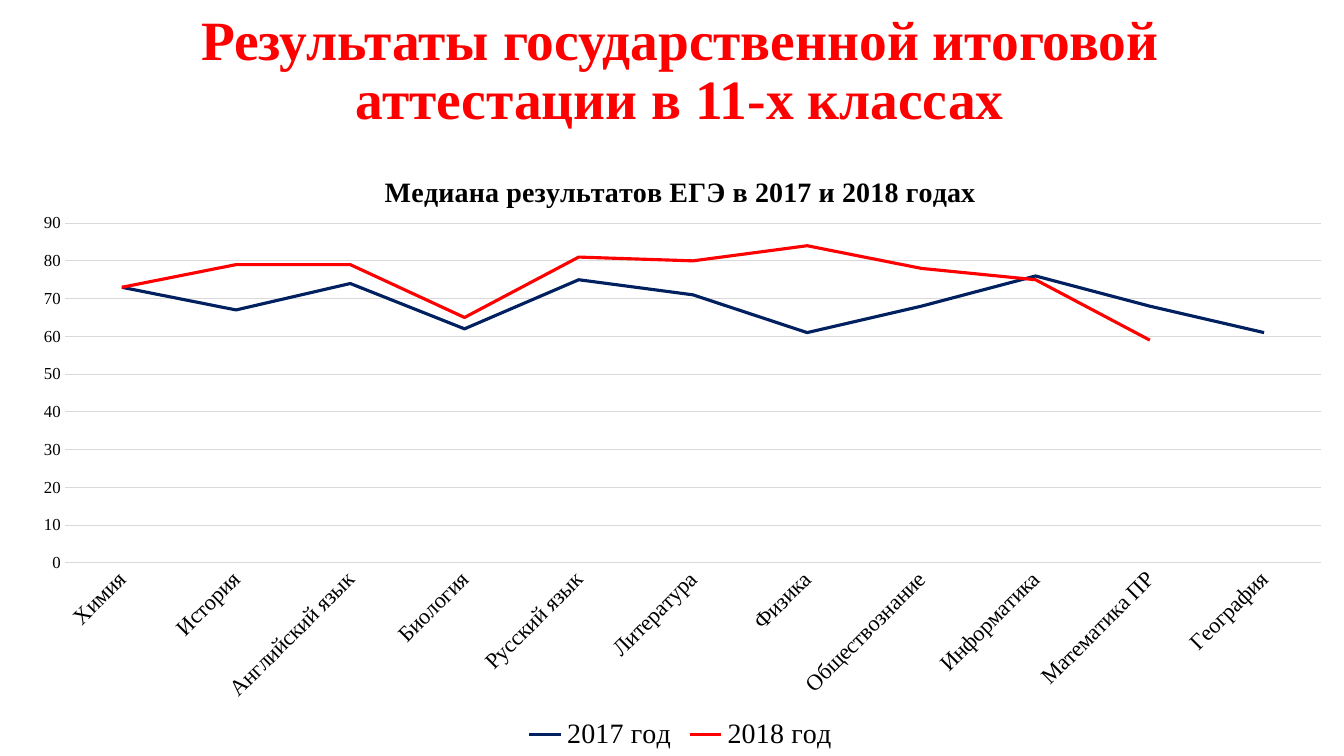
from lxml.etree import SubElement
from pptx import Presentation
from pptx.chart.data import CategoryChartData
from pptx.dml.color import RGBColor
from pptx.enum.chart import XL_CHART_TYPE, XL_LEGEND_POSITION, XL_MARKER_STYLE, XL_TICK_MARK
from pptx.enum.text import MSO_ANCHOR, PP_ALIGN
from pptx.oxml.ns import qn
from pptx.util import Cm, Pt

COLOURS = {"red": "FF0000", "navy": "002060", "black": "000000", "grid": "D9D9D9"}
FONT = "Times New Roman"

SUBJECTS = ["Химия", "История", "Английский язык", "Биология", "Русский язык",
            "Литература", "Физика", "Обществознание", "Информатика",
            "Математика ПР", "География"]
# Series name: (line colour, medians by subject)
MEDIANS = {
    "2017 год": ("navy", [73, 67, 74, 62, 75, 71, 61, 68, 76, 68, 61]),
    "2018 год": ("red", [73, 79, 79, 65, 81, 80, 84, 78, 75, 59, None]),
}
PLOT_AREA = {"x": 0.03, "y": 0.119, "w": 0.959, "h": 0.562}


def set_font(font, size, colour="black", bold=False):
    font.name = FONT
    font.size = Pt(size)
    font.bold = bold
    font.color.rgb = RGBColor.from_string(COLOURS[colour])


def set_line(line, colour, width):
    line.color.rgb = RGBColor.from_string(COLOURS[colour])
    line.width = Pt(width)


def write(frame, text, align=PP_ALIGN.CENTER, spacing=None, **font_format):
    para = frame.paragraphs[0]
    para.alignment = align
    if spacing:
        para.line_spacing = spacing
    span = para.add_run()
    span.text = text
    set_font(span.font, **font_format)


def add_heading(page, text, left, top, width, height):
    box = page.shapes.add_textbox(left, top, width, height)
    frame = box.text_frame
    frame.word_wrap = True
    frame.vertical_anchor = MSO_ANCHOR.MIDDLE
    write(frame, text, spacing=0.9, size=39.6, colour="red", bold=True)


def place_plot(chart):
    """Fix the inner plot rectangle as fractions of the chart."""
    plot_area = chart.element.find(".//" + qn("c:plotArea"))
    for layout in plot_area.findall(qn("c:layout")):
        plot_area.remove(layout)
    layout = SubElement(plot_area, qn("c:layout"))
    plot_area.insert(0, layout)
    manual = SubElement(layout, qn("c:manualLayout"))
    settings = {"layoutTarget": "inner", "xMode": "edge", "yMode": "edge", **PLOT_AREA}
    for name, value in settings.items():
        SubElement(manual, qn("c:" + name)).set("val", str(value))


def format_axes(chart):
    subjects, scores = chart.category_axis, chart.value_axis
    for axis, size in ((subjects, 16), (scores, 12)):
        axis.major_tick_mark = axis.minor_tick_mark = XL_TICK_MARK.NONE
        set_font(axis.tick_labels.font, size)
    set_line(subjects.format.line, "grid", 0.75)
    subjects_body = subjects._element.find(".//" + qn("a:bodyPr"))
    subjects_body.set("rot", str(-45 * 60000))
    subjects_body.set("vert", "horz")
    scores.minimum_scale, scores.maximum_scale, scores.major_unit = 0, 90, 10
    scores.format.line.fill.background()
    scores.has_major_gridlines = True
    set_line(scores.major_gridlines.format.line, "grid", 0.75)


def add_median_chart(page, title, left, top, width, height):
    data = CategoryChartData()
    data.categories = SUBJECTS
    for name, (_, medians) in MEDIANS.items():
        data.add_series(name, medians)
    chart = page.shapes.add_chart(
        XL_CHART_TYPE.LINE, left, top, width, height, data).chart
    set_font(chart.font, 10)

    # Title and legend
    chart.has_title = True
    write(chart.chart_title.text_frame, title, size=20, bold=True)
    chart.chart_title.include_in_layout = False
    chart.has_legend = True
    chart.legend.position = XL_LEGEND_POSITION.BOTTOM
    chart.legend.include_in_layout = False
    set_font(chart.legend.font, 20)

    # Lines
    plot = chart.plots[0]
    plot.vary_by_categories = False
    for series, (colour, _) in zip(plot.series, MEDIANS.values()):
        series.smooth = False
        series.marker.style = XL_MARKER_STYLE.NONE
        set_line(series.format.line, colour, 2.25)

    format_axes(chart)
    place_plot(chart)


def main():
    deck = Presentation()
    deck.slide_width, deck.slide_height = Cm(33.87), Cm(19.05)
    page = deck.slides.add_slide(deck.slide_layouts[6])
    add_heading(page, "Результаты государственной итоговой аттестации в 11-х классах",
                Cm(1.4), Cm(0.89), Cm(31.47), Cm(1.85))
    add_median_chart(page, "Медиана результатов ЕГЭ в 2017 и 2018 годах",
                     Cm(0.64), Cm(3.81), Cm(33.02), Cm(15.24))
    deck.save("out.pptx")


if __name__ == "__main__":
    main()
